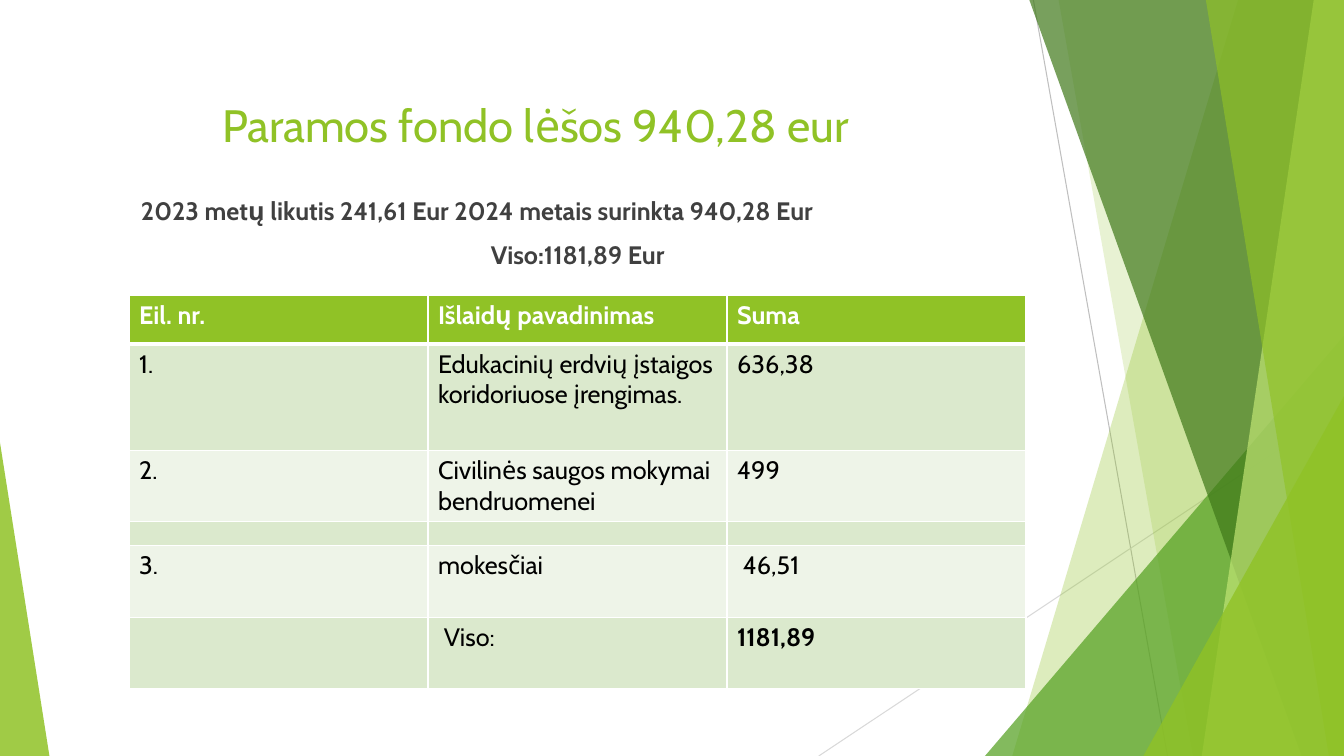
from dataclasses import dataclass

import lxml.etree
import pptx
import pptx.dml.color
import pptx.enum.shapes
import pptx.enum.text
import pptx.oxml.ns
import pptx.util

WIDTH, HEIGHT = 13.33, 7.5
ALIGN = pptx.enum.text.PP_ALIGN


@dataclass(frozen=True)
class Theme:
    font: str = "Cabin"
    lime: str = "90C226"
    pale_lime: str = "C0E474"
    green: str = "54A021"
    dark_green: str = "3F7819"
    text: str = "404040"
    black: str = "000000"
    white: str = "FFFFFF"
    odd_row: str = "DBE9CD"
    even_row: str = "EEF4E8"
    line: str = "BFBFBF"
    pale_line: str = "D9D9D9"
    title_size: float = 32.4
    body_size: float = 18
    spacer_size: float = 8


THEME = Theme()

# Top left and bottom left corner in percent of the width, colour, opacity.
BACK_PANELS = [
    (92.12, 75.32, THEME.lime, 30),
    (78.77, 88.75, THEME.lime, 20),
]
FRONT_PANELS = [
    (76.59, 96.85, THEME.dark_green, 70),
    (97.75, 89.42, THEME.pale_lime, 70),
    (89.72, 98.87, THEME.lime, 65),
]

EXPENSES = [
    ("Eil. nr.", "Išlaidų pavadinimas", "Suma"),
    ("1.", "Edukacinių erdvių įstaigos koridoriuose įrengimas.", "636,38"),
    ("2.", "Civilinės saugos mokymai bendruomenei", "499"),
    ("", "", ""),
    ("3.", "mokesčiai", " 46,51"),
    ("", " Viso:", "1181,89"),
]
ROW_SHARES = [6.4, 14.1, 9.4, 3.2, 9.5, 9.4]
COLUMN_SHARE = 22.25


def across(share):
    """Length of a percentage of the slide's width."""
    return pptx.util.Inches(WIDTH * share / 100)


def down(share):
    """Length of a percentage of the slide's height."""
    return pptx.util.Inches(HEIGHT * share / 100)


def colour(value):
    return pptx.dml.color.RGBColor.from_string(value)


def add_element(parent, tag, **attributes):
    return lxml.etree.SubElement(parent, pptx.oxml.ns.qn(tag), attributes)


def paint(shape, fill, opacity):
    shape.shadow.inherit = False
    shape.line.fill.background()
    shape.fill.solid()
    shape.fill.fore_color.rgb = colour(fill)
    value = shape.fill._xPr.find(".//" + pptx.oxml.ns.qn("a:srgbClr"))
    add_element(value, "a:alpha", val=str(opacity * 1000))


def add_panel(slide, top_left, bottom_left, fill, opacity):
    """Full-height band that reaches the right edge of the slide."""
    builder = slide.shapes.build_freeform(across(top_left), 0)
    corners = [(100, 0), (100, 100), (bottom_left, 100)]
    builder.add_line_segments([(across(x), down(y)) for x, y in corners])
    paint(builder.convert_to_shape(), fill, opacity)


def add_corner(slide, left, right, top, apex, fill, opacity):
    """Triangle standing on the bottom edge; apex is 0 (left) to 1 (right)."""
    triangle = slide.shapes.add_shape(
        pptx.enum.shapes.MSO_SHAPE.ISOSCELES_TRIANGLE,
        across(left), down(top), across(right - left), down(100 - top))
    triangle.adjustments[0] = apex
    paint(triangle, fill, opacity)


def add_thin_line(slide, start, end, line_colour):
    line = slide.shapes.add_connector(
        pptx.enum.shapes.MSO_CONNECTOR.STRAIGHT,
        across(start[0]), down(start[1]), across(end[0]), down(end[1]))
    line.line.color.rgb = colour(line_colour)
    line.line.width = pptx.util.Pt(0.75)
    add_element(line._element.spPr, "a:effectLst")


def add_backdrop(slide):
    add_thin_line(slide, (76.89, 0), (86.87, 100), THEME.line)
    add_thin_line(slide, (100, 53.73), (60.92, 100), THEME.pale_line)
    for panel in BACK_PANELS:
        add_panel(slide, *panel)
    add_corner(slide, 73.29, 100, 44.4, 1, THEME.green, 72)
    for panel in FRONT_PANELS:
        add_panel(slide, *panel)
    add_corner(slide, 85.07, 100, 52.4, 1, THEME.lime, 80)
    add_corner(slide, 0, 3.68, 58.53, 0, THEME.lime, 85)


def format_runs(paragraph, size, text_colour, bold=False):
    for run in paragraph.runs:
        run.font.name = THEME.font
        run.font.size = pptx.util.Pt(size)
        run.font.bold = bold
        run.font.color.rgb = colour(text_colour)


def add_text_frame(slide, left, top, width, height):
    box = slide.shapes.add_textbox(
        across(left), down(top), across(width), down(height))
    box.text_frame.word_wrap = True
    return box.text_frame


def add_title(slide, text):
    frame = add_text_frame(slide, 4.73, 11.8, 70.22, 9.2)
    frame.vertical_anchor = pptx.enum.text.MSO_ANCHOR.MIDDLE
    frame.text = text
    paragraph = frame.paragraphs[0]
    paragraph.alignment = ALIGN.CENTER
    format_runs(paragraph, THEME.title_size, THEME.lime)


def add_balance(slide, detail, total):
    frame = add_text_frame(slide, 6, 25.2, 73.97, 12.5)
    frame.text = detail
    properties = frame.paragraphs[0]._p.get_or_add_pPr()
    properties.set("marL", str(pptx.util.Inches(0.5)))
    total_paragraph = frame.add_paragraph()
    total_paragraph.text = total
    total_paragraph.alignment = ALIGN.CENTER
    for paragraph in frame.paragraphs:
        paragraph.space_before = pptx.util.Pt(10)
        format_runs(paragraph, THEME.body_size, THEME.text, bold=True)


def add_cell_borders(cell, row):
    properties = cell._tc.get_or_add_tcPr()
    widths = {"L": 1, "R": 1, "T": 3 if row == 1 else 1,
              "B": 3 if row == 0 else 1}
    for side, width in widths.items():
        border = add_element(properties, "a:ln" + side,
                             w=str(pptx.util.Pt(width)))
        fill = add_element(border, "a:solidFill")
        add_element(fill, "a:srgbClr", val=THEME.white)


def fill_cell(cell, text, row, is_total):
    add_cell_borders(cell, row)
    row_colour = THEME.odd_row if row % 2 else THEME.even_row
    cell.fill.solid()
    cell.fill.fore_color.rgb = colour(THEME.lime if row == 0 else row_colour)
    paragraph = cell.text_frame.paragraphs[0]
    if text:
        paragraph.text = text
        format_runs(paragraph, THEME.body_size,
                    THEME.white if row == 0 else THEME.black,
                    bold=row == 0 or is_total)
    else:
        add_element(paragraph._p, "a:endParaRPr",
                    sz=str(int(THEME.spacer_size * 100)))


def add_expense_table(slide):
    columns = len(EXPENSES[0])
    table = slide.shapes.add_table(
        len(EXPENSES), columns, across(9.6), down(39.07),
        across(COLUMN_SHARE * columns), down(sum(ROW_SHARES))).table
    for column in table.columns:
        column.width = across(COLUMN_SHARE)
    for row, (texts, share) in enumerate(zip(EXPENSES, ROW_SHARES)):
        table.rows[row].height = down(share)
        for column, text in enumerate(texts):
            is_total = (row, column) == (len(EXPENSES) - 1, columns - 1)
            fill_cell(table.cell(row, column), text, row, is_total)


def main():
    presentation = pptx.Presentation()
    presentation.slide_width = across(100)
    presentation.slide_height = down(100)
    slide = presentation.slides.add_slide(presentation.slide_layouts[6])
    add_backdrop(slide)
    add_title(slide, "Paramos fondo lėšos 940,28 eur")
    add_balance(slide,
                "2023 metų likutis 241,61 Eur 2024 metais surinkta 940,28 Eur",
                "Viso:1181,89 Eur")
    add_expense_table(slide)
    presentation.save("out.pptx")


if __name__ == "__main__":
    main()
